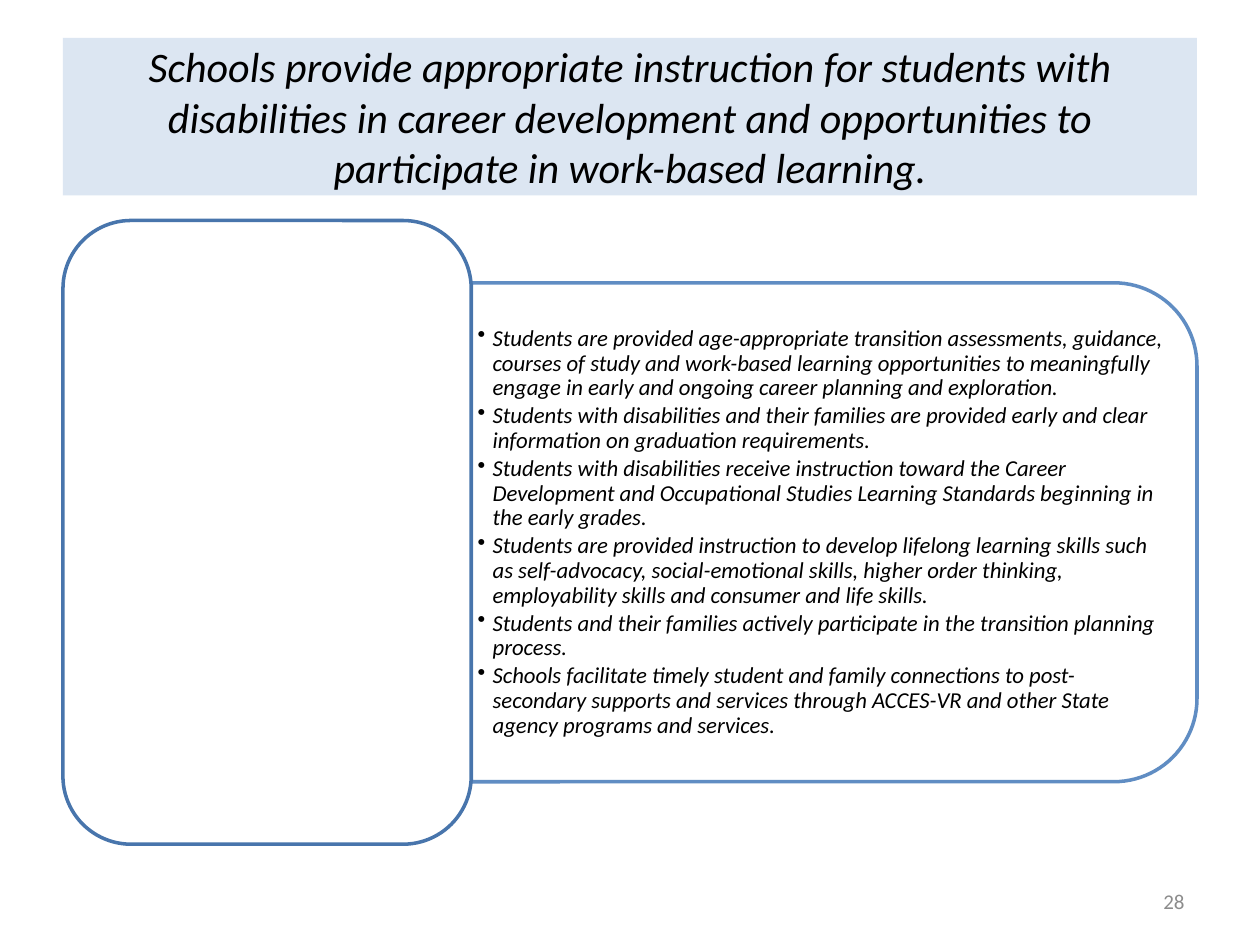
from lxml import etree
from pptx import Presentation
from pptx import util as u
from pptx.dml.color import RGBColor
from pptx.enum import shapes, text
from pptx.oxml import ns

WIDE, HIGH = 10, 7.5
FONT = "Calibri"
BLACK = RGBColor(0x00, 0x00, 0x00)
WHITE = RGBColor(0xFF, 0xFF, 0xFF)
PALE = RGBColor(0xDC, 0xE6, 0xF2)
BLUE = RGBColor(0x4F, 0x81, 0xBD)
DEEP = RGBColor(0x48, 0x75, 0xAC)
GRAY = RGBColor(0x8C, 0x8C, 0x8C)

TITLE = ("Schools provide appropriate instruction for students with disabilities "
         "in career development and opportunities to participate in work-based learning.")
POINTS = [
    "Students are provided age-appropriate transition assessments, guidance, courses of "
    "study and work-based learning opportunities to meaningfully engage in early and "
    "ongoing career planning and exploration.",
    "Students with disabilities and their families are provided early and clear "
    "information on graduation requirements.",
    "Students with disabilities receive instruction toward the Career Development and "
    "Occupational Studies Learning Standards beginning in the early grades.",
    "Students are provided instruction to develop lifelong learning skills such as "
    "self-advocacy, social-emotional skills, higher order thinking, employability skills "
    "and consumer and life skills.",
    "Students and their families actively participate in the transition planning process.",
    "Schools facilitate timely student and family connections to post-secondary supports "
    "and services through ACCES-VR and other State agency programs and services.",
]


def share(box, x, y, w, h):
    """Part of a box, given as shares of its width and height."""
    left, top, wide, high = box
    return left + x * wide, top + y * high, w * wide, h * high


def add_form(slide, kind, box, fill, line=None):
    form = slide.shapes.add_shape(kind, *map(u.Inches, box))
    form.shadow.inherit = False
    form.fill.solid()
    form.fill.fore_color.rgb = fill
    if line is None:
        form.line.fill.background()
    else:
        form.line.color.rgb = line
        form.line.width = u.Pt(2)
    return form


def fade(form, percent):
    """Set the opacity of a shape's fill and line."""
    for tone in form._element.spPr.iter(ns.qn("a:srgbClr")):
        etree.SubElement(tone, ns.qn("a:alpha"), val=str(percent * 1000))


def write(form, lines, size, color, align, italic=False):
    frame = form.text_frame
    frame.word_wrap = True
    frame.vertical_anchor = text.MSO_ANCHOR.MIDDLE
    frame.text = "\n".join(lines)
    for para in frame.paragraphs:
        para.alignment = align
        for run in para.runs:
            run.font.name = FONT
            run.font.size = u.Pt(size)
            run.font.italic = italic
            run.font.color.rgb = color
    return frame


def add_dot(para, dent):
    """Give a paragraph a hanging bullet."""
    props = para._p.get_or_add_pPr()
    props.set("marL", str(u.Inches(dent)))
    props.set("indent", str(-u.Inches(dent)))
    etree.SubElement(props, ns.qn("a:buChar"), char="•")


def add_title(slide, box):
    form = add_form(slide, shapes.MSO_SHAPE.RECTANGLE, box, PALE)
    write(form, [TITLE], 24, BLACK, text.PP_ALIGN.CENTER, italic=True)


def add_list(slide, box):
    """Panel rounded on its right side, with the bulleted points."""
    left, top, wide, high = box
    turn = (wide - high) / 2
    upright = (left + turn, top - turn, high, wide)
    panel = add_form(slide, shapes.MSO_SHAPE.ROUND_2_SAME_RECTANGLE, upright, WHITE, BLUE)
    panel.rotation = 90
    fade(panel, 90)

    area = share(box, 0, 0.05, 0.967, 0.9)
    note = slide.shapes.add_textbox(*map(u.Inches, area))
    frame = write(note, POINTS, 13, BLACK, text.PP_ALIGN.LEFT, italic=True)
    frame.margin_left = frame.margin_right = u.Inches(0.05)
    frame.margin_top = frame.margin_bottom = u.Inches(0.03)
    for para in frame.paragraphs:
        para.line_spacing = 0.9
        para.space_after = u.Pt(2)
        add_dot(para, 0.12)


def add_body(slide, box):
    """Empty card on the left, list panel on the right."""
    split = 0.36
    add_list(slide, share(box, split, 0.1, 1 - split, 0.8))
    add_form(slide, shapes.MSO_SHAPE.ROUNDED_RECTANGLE,
             share(box, 0, 0, split, 1), WHITE, DEEP)


def add_number(slide, box):
    note = slide.shapes.add_textbox(*map(u.Inches, box))
    write(note, ["28"], 12, GRAY, text.PP_ALIGN.RIGHT)


def main():
    deck = Presentation()
    deck.slide_width, deck.slide_height = u.Inches(WIDE), u.Inches(HIGH)
    slide = deck.slides.add_slide(deck.slide_layouts[6])
    page = (0, 0, WIDE, HIGH)
    add_title(slide, share(page, 0.05, 0.04, 0.9, 1 / 6))
    add_body(slide, share(page, 0.05, 7 / 30, 0.9, 0.66))
    add_number(slide, share(page, 43 / 60, 0.927, 7 / 30, 0.053))
    deck.save("out.pptx")


if __name__ == "__main__":
    main()
